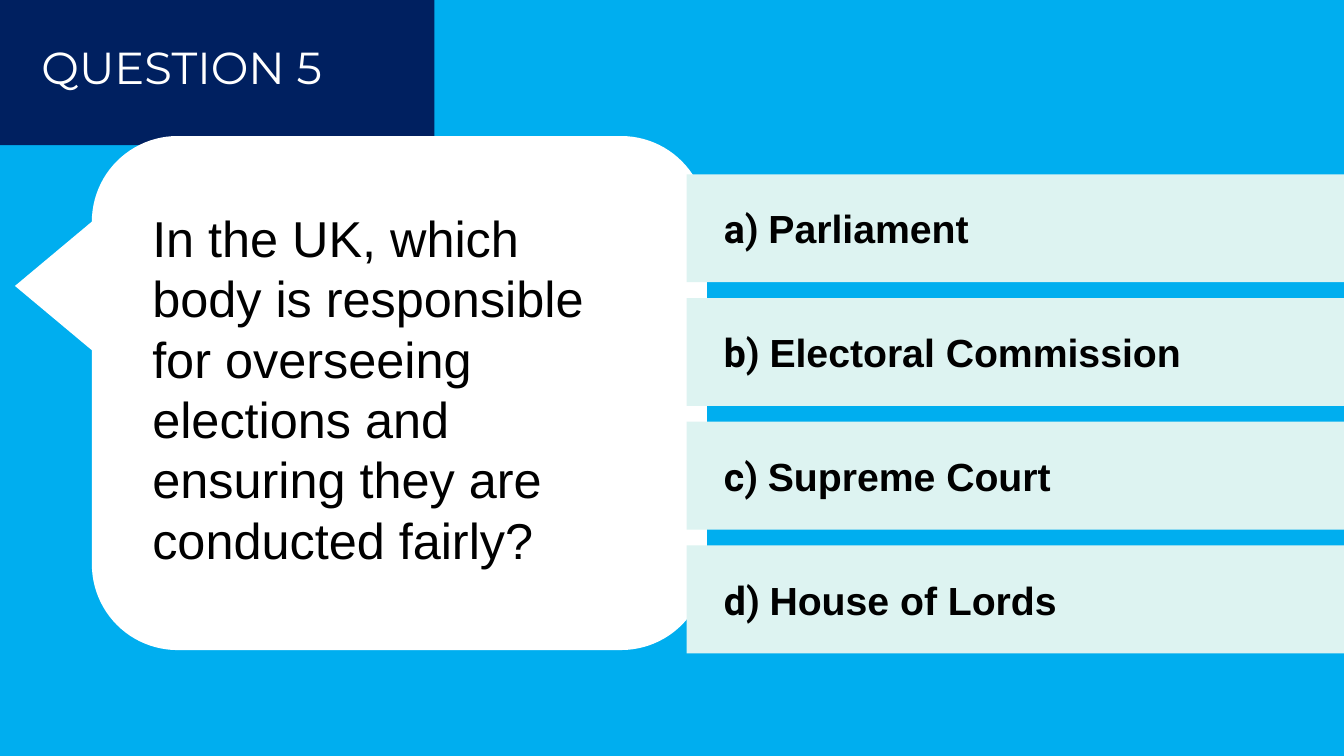
from dataclasses import dataclass

from pptx import Presentation
from pptx.dml.color import RGBColor as Rgb
from pptx.enum.shapes import MSO_SHAPE as Preset
from pptx.enum.text import MSO_ANCHOR as Anchor, MSO_AUTO_SIZE as AutoSize, PP_ALIGN as Align
from pptx.oxml.ns import qn
from pptx.util import Inches, Pt

WIDTH, HEIGHT = Inches(13.33), Inches(7.5)


@dataclass(frozen=True)
class Theme:
    sky: Rgb = Rgb.from_string("00AEEF")
    navy: Rgb = Rgb.from_string("002060")
    mint: Rgb = Rgb.from_string("DDF3F1")
    white: Rgb = Rgb.from_string("FFFFFF")
    black: Rgb = Rgb.from_string("000000")
    title_font: str = "Montserrat"
    text_font: str = "Arial"
    label_font: str = "Roboto"
    title_size: int = 32
    question_size: int = 36
    answer_size: int = 28


THEME = Theme()
TITLE = "QUESTION 5"
QUESTION = [
    "In the UK, which",
    "body is responsible",
    "for overseeing",
    "elections and",
    "ensuring they are",
    "conducted fairly?",
]
ANSWERS = ["Parliament", "Electoral Commission", "Supreme Court", "House of Lords"]

# Answer bars, in percent of the slide
BAR_LEFT, BAR_TOP, BAR_HEIGHT, BAR_PITCH = 51.09, 23.07, 14.27, 16.36


def area(left, top, width, height):
    """Turn percentages of the slide into lengths."""
    return [int(share * side / 100) for share, side in
            zip((left, top, width, height), (WIDTH, HEIGHT) * 2)]


def set_font(font, name, size, color, bold=False):
    font.name, font.size, font.bold = name, Pt(size), bold
    font.color.rgb = color


def add_block(page, preset, place, color):
    block = page.shapes.add_shape(preset, *area(*place))
    block.shadow.inherit = False
    block.fill.solid()
    block.fill.fore_color.rgb = color
    block.line.fill.background()
    return block


def fill_placeholder(box, place, text, anchor, inset):
    """Place a template placeholder in front and give it plain left-aligned text."""
    box.left, box.top, box.width, box.height = area(*place)
    box.element.getparent().append(box.element)
    frame = box.text_frame
    frame.word_wrap = True
    frame.auto_size = AutoSize.NONE
    frame.vertical_anchor = anchor
    frame.margin_left = frame.margin_right = Inches(inset)
    frame.text = text
    para = frame.paragraphs[0]
    para.alignment = Align.LEFT
    para.space_before = Pt(0)
    return para


def remove_bullet(para):
    properties = para._p.get_or_add_pPr()
    properties.set("marL", "0")
    properties.set("indent", "0")
    properties.append(properties.makeelement(qn("a:buNone"), {}))


def add_answer(page, row, letter, answer):
    place = (BAR_LEFT, BAR_TOP + row * BAR_PITCH, 100 - BAR_LEFT, BAR_HEIGHT)
    bar = add_block(page, Preset.RECTANGLE, place, THEME.mint)
    frame = bar.text_frame
    frame.margin_left = Inches(0.37)
    frame.vertical_anchor = Anchor.MIDDLE
    para = frame.paragraphs[0]
    para.alignment = Align.LEFT
    for text, font in ((f"{letter}) ", THEME.label_font), (answer, THEME.text_font)):
        span = para.add_run()
        span.text = text
        set_font(span.font, font, THEME.answer_size, THEME.black, bold=True)


def main():
    deck = Presentation()
    deck.slide_width, deck.slide_height = WIDTH, HEIGHT
    page = deck.slides.add_slide(deck.slide_layouts[1])
    page.background.fill.solid()
    page.background.fill.fore_color.rgb = THEME.sky

    # Title banner
    add_block(page, Preset.RECTANGLE, (0, 0, 32.33, 19.2), THEME.navy)
    title = fill_placeholder(page.shapes.title, (2.18, 4.27, 30.16, 9.87),
                             TITLE, Anchor.MIDDLE, 0.12)
    title.line_spacing = 0.9
    set_font(title.font, THEME.title_font, THEME.title_size, THEME.white)

    # Speech bubble, turned so that its tip points left
    bubble = add_block(page, Preset.ROUNDED_RECTANGULAR_CALLOUT,
                       (10.58, 11.33, 38.26, 81.33), THEME.white)
    bubble.rotation = 90
    question = fill_placeholder(page.placeholders[1], (10.58, 26.67, 37.51, 49.87),
                                "\v".join(QUESTION), Anchor.TOP, 0.1)
    remove_bullet(question)
    set_font(question.font, THEME.text_font, THEME.question_size, THEME.black)

    # Answers
    for row, (letter, answer) in enumerate(zip("abcd", ANSWERS)):
        add_answer(page, row, letter, answer)

    deck.save("out.pptx")


if __name__ == "__main__":
    main()
